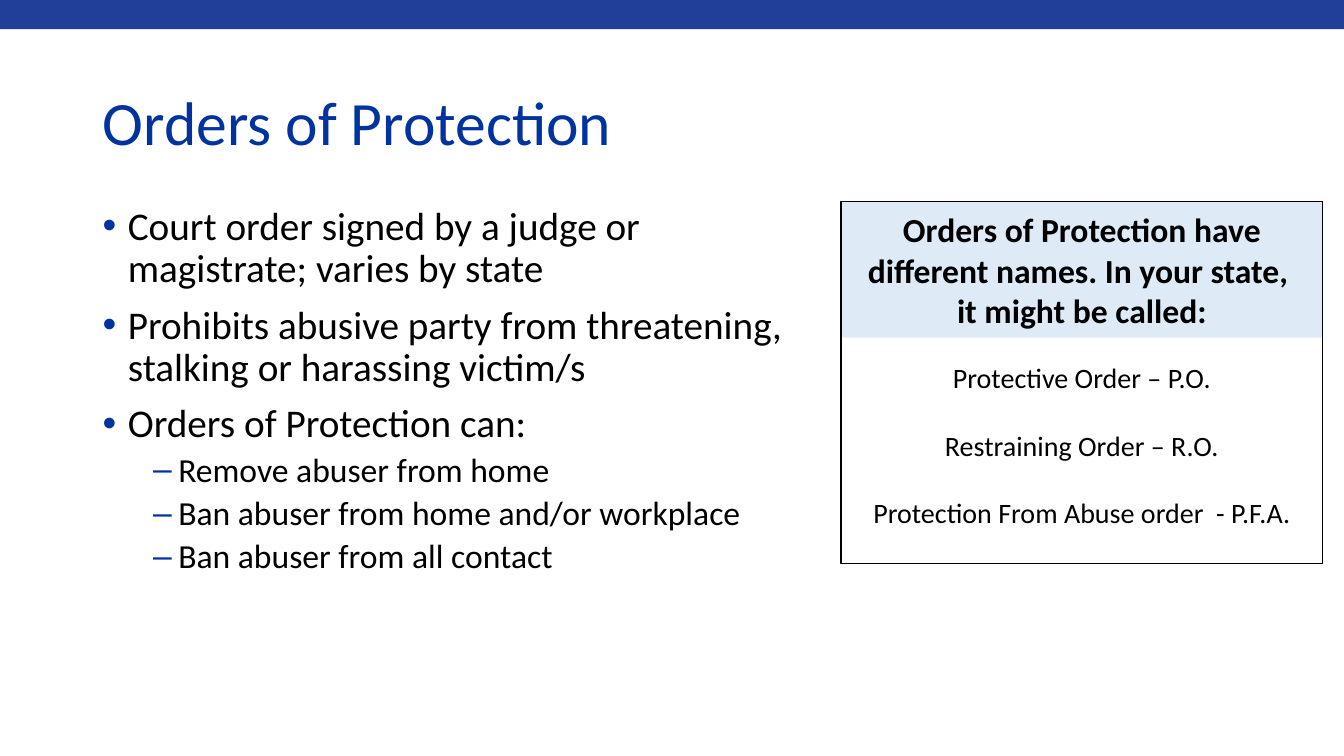
"""Build the slide on orders of protection."""
from dataclasses import dataclass

from lxml import etree
from pptx import Presentation
from pptx.dml.color import RGBColor
from pptx.enum import shapes, text
from pptx.oxml import ns
from pptx.util import Inches, Pt


@dataclass
class Theme:
    font: str = "Calibri"
    bar: str = "213F98"
    blue: str = "0033A0"
    pale: str = "DEEBF7"
    ink: str = "000000"
    title: int = 44
    body: int = 28
    sub: int = 24
    note: int = 20


theme = Theme()


def add_run(para, words, size, color=theme.ink, bold=False):
    """Add one styled run to a paragraph."""
    run = para.add_run()
    run.text = words
    run.font.name = theme.font
    run.font.size = Pt(size)
    run.font.bold = bold
    run.font.color.rgb = RGBColor.from_string(color)


def add_rect(left, top, width, height, fill=None, line=None):
    """Add a plain rectangle with an optional fill and line."""
    rect = slide.shapes.add_shape(
        shapes.MSO_SHAPE.RECTANGLE, Inches(left), Inches(top), Inches(width), Inches(height))
    rect.shadow.inherit = False
    if fill:
        rect.fill.solid()
        rect.fill.fore_color.rgb = RGBColor.from_string(fill)
    else:
        rect.fill.background()
    if line:
        rect.line.color.rgb = RGBColor.from_string(line)
        rect.line.width = Pt(1)
    else:
        rect.line.fill.background()
    return rect


deck = Presentation()
deck.slide_width, deck.slide_height = Inches(13.33), Inches(7.5)
slide = deck.slides.add_slide(deck.slide_layouts[6])

add_rect(0, -0.02, 13.33, 0.31, fill=theme.bar)

title = slide.shapes.add_textbox(Inches(0.92), Inches(0.77), Inches(11.5), Inches(0.95)).text_frame
title.word_wrap = True
title.vertical_anchor = text.MSO_ANCHOR.MIDDLE
title.paragraphs[0].line_spacing = 0.9
add_run(title.paragraphs[0], "Orders of Protection", theme.title, theme.blue)

points = [
    (0, "Court order signed by a judge or magistrate; varies by state"),
    (0, "Prohibits abusive party from threatening, stalking or harassing victim/s"),
    (0, "Orders of Protection can:"),
    (1, "Remove abuser from home"),
    (1, "Ban abuser from home and/or workplace"),
    (1, "Ban abuser from all contact"),
]
levels = [(0.25, 10, "•", theme.body), (0.75, 5, "–", theme.sub)]

body = slide.shapes.add_textbox(Inches(0.92), Inches(2), Inches(7.08), Inches(4.84)).text_frame
body.word_wrap = True
for i, (level, words) in enumerate(points):
    indent, gap, mark, size = levels[level]
    para = body.add_paragraph() if i else body.paragraphs[0]
    para.level = level
    para.line_spacing = 0.9
    para.space_before = Pt(gap)
    props = para._p.get_or_add_pPr()
    props.set("marL", str(Inches(indent)))
    props.set("indent", str(-Inches(0.25)))
    tint = etree.SubElement(props, ns.qn("a:buClr"))
    etree.SubElement(tint, ns.qn("a:srgbClr"), val=theme.blue)
    etree.SubElement(props, ns.qn("a:buFont"), typeface="Arial")
    etree.SubElement(props, ns.qn("a:buChar"), char=mark)
    add_run(para, words, size)

left, top, width = 8.34, 2, 4.78
head = add_rect(left, top, width, 1.35, fill=theme.pale).text_frame
head.word_wrap = True
head.vertical_anchor = text.MSO_ANCHOR.MIDDLE
lines = ["Orders of Protection have different names. In your state, ", "it might be called:"]
for i, words in enumerate(lines):
    para = head.add_paragraph() if i else head.paragraphs[0]
    para.alignment = text.PP_ALIGN.CENTER
    add_run(para, words, theme.sub, bold=True)

names = ["Protective Order – P.O.", "Restraining Order – R.O.", "Protection From Abuse order  - P.F.A."]
note = slide.shapes.add_textbox(Inches(left), Inches(3.53), Inches(width), Inches(1.78)).text_frame
note.word_wrap = True
for i, words in enumerate(names):
    para = note.add_paragraph() if i else note.paragraphs[0]
    para.alignment = text.PP_ALIGN.CENTER
    para.space_before = Pt(24 if i else 0)
    add_run(para, words, theme.note)

add_rect(left, top, width, 3.59, line=theme.ink)

deck.save("out.pptx")
